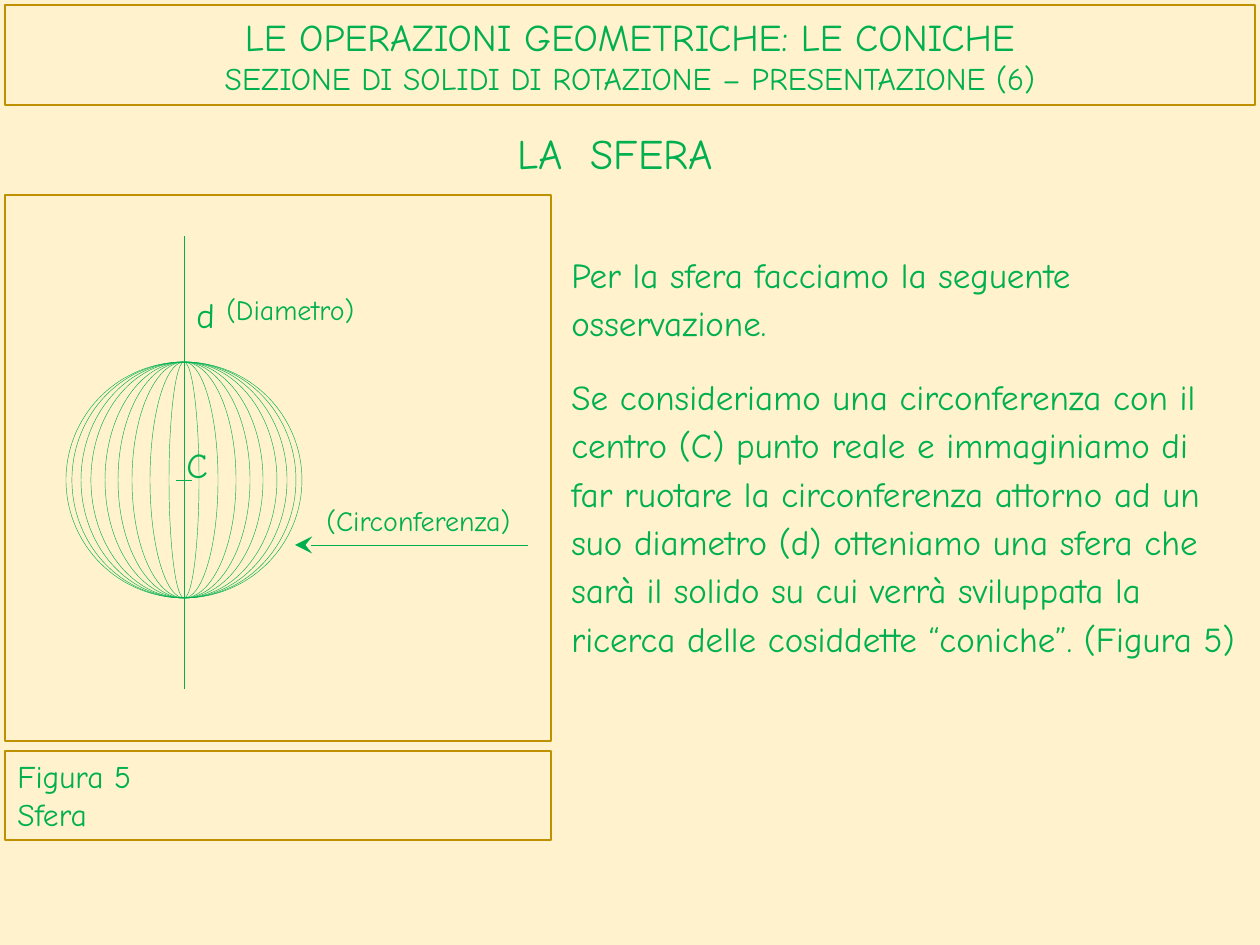
from lxml.etree import SubElement
from pptx import Presentation
from pptx.dml.color import RGBColor
from pptx.enum.shapes import MSO_CONNECTOR, MSO_SHAPE
from pptx.enum.text import MSO_ANCHOR, MSO_AUTO_SIZE, PP_ALIGN
from pptx.oxml.ns import qn
from pptx.util import Emu, Pt

GREEN = RGBColor(0x00, 0xB0, 0x50)
GOLD = RGBColor(0xBF, 0x90, 0x00)
CREAM = RGBColor(0xFF, 0xF2, 0xCC)
FONT = "Comic Neue"
EMU_PER_PX = 914400 / 126


def px(*lengths):
    return [Emu(round(length * EMU_PER_PX)) for length in lengths]


class GeometrySlide:
    """Style and drawing methods for one slide of the geometry lesson."""

    def __init__(self, presentation):
        self.slide = presentation.slides.add_slide(presentation.slide_layouts[5])
        self.slide.background.fill.solid()
        self.slide.background.fill.fore_color.rgb = CREAM

    def outline(self, item, color, weight):
        item.line.color.rgb = color
        item.line.width = Pt(weight)

    def run(self, paragraph, text, size):
        run = paragraph.add_run()
        run.text = text
        run.font.name = FONT
        run.font.size = Pt(size)
        run.font.color.rgb = GREEN

    def title(self, box, lines):
        heading = self.slide.shapes.title
        heading.left, heading.top, heading.width, heading.height = px(*box)
        self.outline(heading, GOLD, 0.75)
        frame = heading.text_frame
        frame.auto_size = MSO_AUTO_SIZE.NONE
        frame.vertical_anchor = MSO_ANCHOR.MIDDLE
        paragraph = frame.paragraphs[0]
        paragraph.alignment = PP_ALIGN.CENTER
        for index, (text, size) in enumerate(lines):
            if index:
                paragraph.add_line_break()
            self.run(paragraph, text, size)

    def text(self, box, lines, size, wrap=True, anchor=MSO_ANCHOR.TOP,
             spacing=None, after=None):
        label = self.slide.shapes.add_textbox(*px(*box))
        frame = label.text_frame
        frame.word_wrap = wrap
        frame.auto_size = MSO_AUTO_SIZE.SHAPE_TO_FIT_TEXT
        frame.vertical_anchor = anchor
        for index, line in enumerate(lines):
            paragraph = frame.add_paragraph() if index else frame.paragraphs[0]
            paragraph.line_spacing = spacing
            paragraph.space_after = after
            self.run(paragraph, line, size)
        return label

    def shape(self, kind, box, color, weight):
        figure = self.slide.shapes.add_shape(kind, *px(*box))
        figure.shadow.inherit = False
        figure.fill.background()
        self.outline(figure, color, weight)

    def line(self, ends, weight=0.25, arrow=False):
        stroke = self.slide.shapes.add_connector(MSO_CONNECTOR.STRAIGHT, *px(*ends))
        self.outline(stroke, GREEN, weight)
        properties = stroke.line._get_or_add_ln()
        if arrow:
            SubElement(properties, qn("a:tailEnd"), type="stealth", w="lg", len="lg")
        SubElement(properties.getparent(), qn("a:effectLst"))


def main():
    presentation = Presentation()
    presentation.slide_width, presentation.slide_height = px(1260, 945)
    page = GeometrySlide(presentation)

    page.title((5, 5, 1250, 100), [
        ("LE OPERAZIONI GEOMETRICHE: LE CONICHE", 21.6),
        ("SEZIONE DI SOLIDI DI ROTAZIONE – PRESENTAZIONE (6)", 18),
    ])
    page.text((505, 121, 251, 63), ["LA  SFERA"], 24, anchor=MSO_ANCHOR.MIDDLE)
    caption = page.text((5, 751, 546, 89), ["Figura 5", "Sfera"], 18)
    page.outline(caption, GOLD, 0.75)
    page.shape(MSO_SHAPE.RECTANGLE, (5, 195, 546, 546), GOLD, 1)

    center_x, center_y, diameter = 184, 480, 236
    for width in (diameter, 224, 206, 186, 158, 132, 104, 68, 30):
        meridian = (center_x - width // 2, center_y - diameter // 2, width, diameter)
        page.shape(MSO_SHAPE.OVAL, meridian, GREEN, 0.25)
    page.line((center_x, 236, center_x, 689))
    tick = 8
    page.line((center_x - tick, center_y, center_x + tick, center_y))
    page.line((center_x, center_y - tick, center_x, center_y + tick))
    page.line((528, 545, 295, 545), 0.5, arrow=True)

    page.text((174, 437, 44, 39), ["C"], 20, wrap=False)
    page.text((184, 287, 47, 55), ["d"], 20, wrap=False)
    page.text((214, 286, 174, 47), ["(Diametro)"], 16)
    page.text((314, 497, 256, 47), ["(Circonferenza)"], 16)

    explanation = [
        (241, 107, "Per la sfera facciamo la seguente osservazione."),
        (363, 352, "Se consideriamo una circonferenza con il centro (C) punto reale e "
                   "immaginiamo di far ruotare la circonferenza attorno ad un suo "
                   "diametro (d) otteniamo una sfera che sarà il solido su cui verrà "
                   "sviluppata la ricerca delle cosiddette “coniche”. (Figura 5)"),
    ]
    for top, height, passage in explanation:
        page.text((559, top, 694, height), [passage], 20, spacing=1.15, after=Pt(10))

    presentation.save("out.pptx")


if __name__ == "__main__":
    main()
